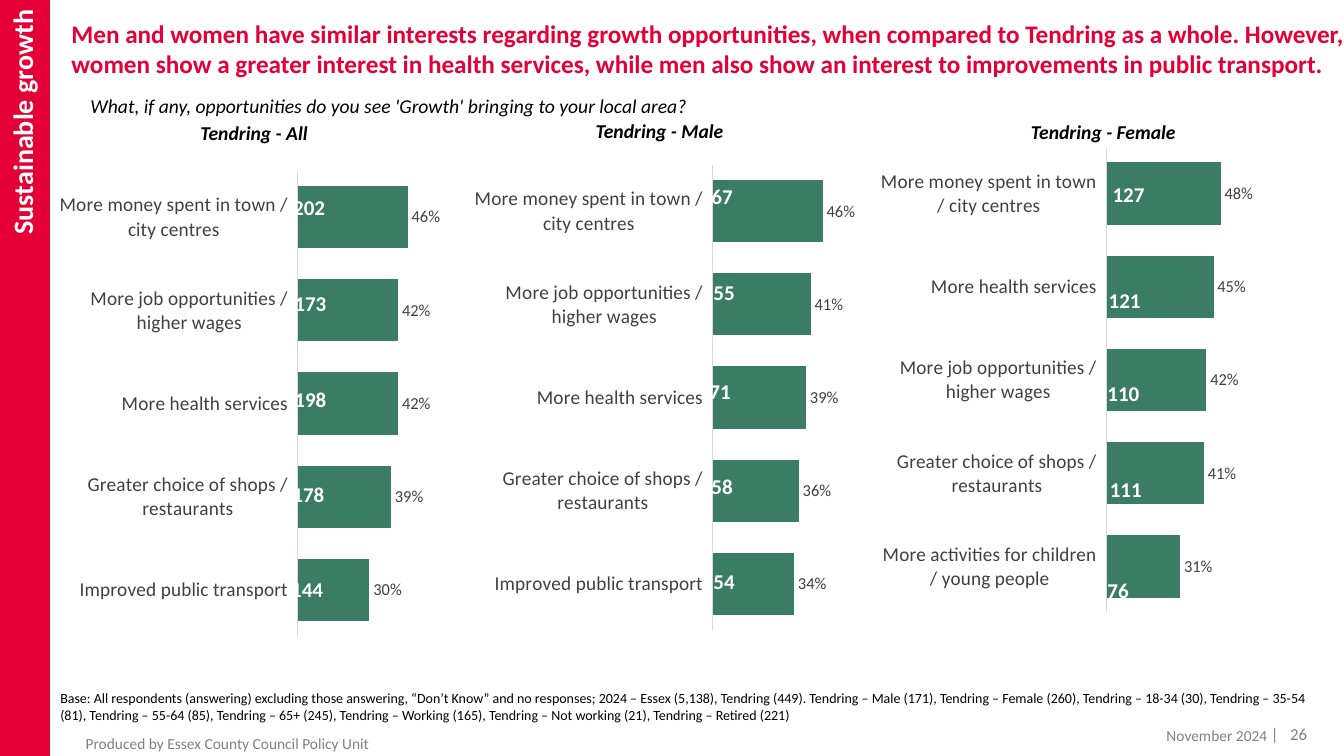
from lxml import etree
from pptx import Presentation
from pptx.chart.data import CategoryChartData
from pptx.dml.color import RGBColor
from pptx.enum.chart import XL_CHART_TYPE as CHART, XL_LABEL_POSITION as LABEL_POS
from pptx.enum.chart import XL_TICK_LABEL_POSITION as TICK_POS, XL_TICK_MARK as TICK
from pptx.enum.shapes import MSO_SHAPE
from pptx.enum.text import MSO_ANCHOR as ANCHOR, PP_ALIGN as ALIGN
from pptx.oxml import parse_xml
from pptx.oxml.ns import nsdecls, qn
from pptx.util import Cm, Pt

COLORS = {"red": "E40037", "green": "3A7D64", "grey": "808080", "label": "404040",
          "axis": "D9D9D9", "black": "000000", "white": "FFFFFF"}
FONT = "Calibri"
INSETS = (0.25, 0.13, 0.25, 0.13)  # left, top, right, bottom


def style(font, size, color, bold=False, italic=False):
    font.name, font.size = FONT, Pt(size)
    font.bold, font.italic = bold, italic
    font.color.rgb = RGBColor.from_string(COLORS[color])


def write(sp, text, size, color, bold=False, italic=False,
          align=ALIGN.LEFT, anchor=ANCHOR.TOP, insets=INSETS):
    """Put one formatted run in the shape and return its paragraph."""
    tf = sp.text_frame
    tf.word_wrap = True
    tf.vertical_anchor = anchor
    tf.margin_left, tf.margin_top, tf.margin_right, tf.margin_bottom = map(Cm, insets)
    p = tf.paragraphs[0]
    p.alignment = align
    r = p.add_run()
    r.text = text
    style(r.font, size, color, bold, italic)
    return p


prs = Presentation()
prs.slide_width, prs.slide_height = Cm(33.87), Cm(19.05)
s = prs.slides.add_slide(prs.slide_layouts[5])
shapes = s.shapes

# Title and section band
title = shapes.title
title.left, title.top, title.width, title.height = Cm(1.55), Cm(0.33), Cm(32.77), Cm(3.33)
write(title, "Men and women have similar interests regarding growth opportunities, when "
      "compared to Tendring as a whole. However, women show a greater interest in health "
      "services, while men also show an interest to improvements in public transport.",
      18, "red", bold=True, insets=(0.25, 0.13, 0.25, 0))

band = shapes.add_shape(MSO_SHAPE.RECTANGLE, 0, 0, Cm(1.24), prs.slide_height)
band.shadow.inherit = False
band.fill.solid()
band.fill.fore_color.rgb = band.line.color.rgb = RGBColor.from_string(COLORS["red"])
band.line.width = Pt(1)
write(band, "Sustainable growth", 20, "white", bold=True, align=ALIGN.RIGHT,
      anchor=ANCHOR.MIDDLE, insets=(0.25, 0.25, 0.38, 0.13))
band.text_frame._txBody.bodyPr.set("vert", "vert270")

# Bar charts, each with a heading and the respondent counts over its bars
MONEY = "More money spent in town / city centres"
JOBS = "More job opportunities / higher wages"
HEALTH = "More health services"
SHOPS = "Greater choice of shops / restaurants"
TRANSPORT = "Improved public transport"
CHILDREN = "More activities for children / young people"

panels = [
    {"heading": "Tendring - All", "heading_at": (4.8, 2.92, 3.48),
     "chart_at": (1.5, 3.63), "plot_at": (0.547, 0.054),
     "cats": [MONEY, JOBS, HEALTH, SHOPS, TRANSPORT],
     "shares": [0.46, 0.42, 0.42, 0.39, 0.3],
     "counts": [("202", 7.39, 4.9), ("173", 7.42, 7.32), ("198", 7.42, 9.73),
                ("178", 7.37, 12.14), ("144", 7.34, 14.53)]},
    {"heading": "Tendring - Male", "heading_at": (14.76, 2.87, 5.69),
     "chart_at": (11.96, 3.48), "plot_at": (0.547, 0.054),
     "cats": [MONEY, JOBS, HEALTH, SHOPS, TRANSPORT],
     "shares": [0.46, 0.41, 0.39, 0.36, 0.34],
     "counts": [("67", 17.93, 4.62), ("55", 17.98, 7.04), ("71", 17.88, 9.53),
                ("58", 17.93, 11.94), ("54", 17.98, 14.33)]},
    {"heading": "Tendring - Female", "heading_at": (25.73, 2.9, 5.69),
     "chart_at": (22.2, 3.68), "plot_at": (0.515, 0.002),
     "cats": [MONEY, HEALTH, JOBS, SHOPS, CHILDREN],
     "shares": [0.48, 0.45, 0.42, 0.41, 0.31],
     "counts": [("127", 28.04, 4.57), ("121", 27.94, 7.24), ("110", 27.91, 9.6),
                ("111", 27.97, 12.01), ("76", 27.91, 14.55)]},
]

for panel in panels:
    data = CategoryChartData(number_format="0%")
    data.categories = panel["cats"]
    data.add_series("Series 1", panel["shares"])
    left, top = map(Cm, panel["chart_at"])
    chart = shapes.add_chart(CHART.BAR_CLUSTERED, left, top, Cm(10.82), Cm(12.42), data).chart
    chart.has_legend = chart.has_title = False
    style(chart.font, 10, "black")

    cat_axis, val_axis = chart.category_axis, chart.value_axis
    cat_axis.reverse_order = True
    cat_axis.major_tick_mark = cat_axis.minor_tick_mark = TICK.NONE
    cat_axis.tick_label_position = TICK_POS.LOW
    cat_axis.format.line.color.rgb = RGBColor.from_string(COLORS["axis"])
    cat_axis.format.line.width = Pt(0.75)
    style(cat_axis.tick_labels.font, 14, "label")
    val_axis.minimum_scale, val_axis.maximum_scale = 0, 0.8
    val_axis.has_major_gridlines = False
    val_axis.visible = False

    plot = chart.plots[0]
    plot.gap_width = 50
    plot.vary_by_categories = False
    bars = plot.series[0].format
    bars.fill.solid()
    bars.fill.fore_color.rgb = RGBColor.from_string(COLORS["green"])
    plot.has_data_labels = True
    labels = plot.data_labels
    labels.show_value = True
    labels.number_format, labels.number_format_is_linked = "0%", False
    labels.position = LABEL_POS.OUTSIDE_END
    style(labels.font, 12, "label")

    plot_area = chart._chartSpace.chart.plotArea
    for old in plot_area.findall(qn("c:layout")):
        plot_area.remove(old)
    layout = parse_xml(f"<c:layout {nsdecls('c')}><c:manualLayout/></c:layout>")
    x, y = panel["plot_at"]
    for tag, val in [("layoutTarget", "inner"), ("xMode", "edge"), ("yMode", "edge"),
                     ("x", x), ("y", y), ("w", 0.453), ("h", 0.946)]:
        etree.SubElement(layout[0], qn(f"c:{tag}")).set("val", str(val))
    plot_area.insert(0, layout)

    left, top, width = map(Cm, panel["heading_at"])
    heading = shapes.add_textbox(left, top, width, Cm(0.86))
    p = write(heading, panel["heading"], 14, "black", bold=True, italic=True)
    p.space_before = Pt(6)
    for count, left, top in panel["counts"]:
        box = shapes.add_textbox(Cm(left), Cm(top), Cm(0.84), Cm(0.56))
        write(box, count, 15, "white", bold=True, insets=(0, 0, 0, 0))

# Question, base note and footer
question = shapes.add_textbox(Cm(2.03), Cm(2.24), Cm(16.61), Cm(0.86))
write(question, "What, if any, opportunities do you see 'Growth' bringing to your local area?",
      14, "black", italic=True)

base = shapes.add_textbox(Cm(1.27), Cm(17.25), Cm(32.28), Cm(1.12))
write(base, "Base: All respondents (answering) excluding those answering, “Don’t Know” and no "
      "responses; 2024 – Essex (5,138), Tendring (449). Tendring – Male (171), Tendring – "
      "Female (260), Tendring – 18-34 (30), Tendring – 35-54 (81), Tendring – 55-64 (85), "
      "Tendring – 65+ (245), Tendring – Working (165), Tendring – Not working (21), "
      "Tendring – Retired (221)", 10, "black")

producer = shapes.add_textbox(Cm(1.93), Cm(18.54), Cm(16.61), Cm(0.38))
write(producer, "Produced by Essex County Council Policy Unit", 11, "grey",
      anchor=ANCHOR.MIDDLE, insets=(0.23, 0.13, 0.25, 0.13))

date = shapes.add_textbox(Cm(26.09), Cm(18.16), Cm(6.1), Cm(0.38))
write(date, "November 2024", 11, "grey", align=ALIGN.RIGHT)

page = shapes.add_textbox(Cm(30.78), Cm(18.31), Cm(2.16), Cm(0.38))
p = write(page, "| ", 12, "grey", align=ALIGN.RIGHT, anchor=ANCHOR.MIDDLE,
          insets=(0.25, 0.13, 0, 0.13))
p.runs[0].font._element.set("spc", "270")  # widens the gap after the bar
r = p.add_run()
r.text = "26"
style(r.font, 12, "grey")

prs.save("out.pptx")
